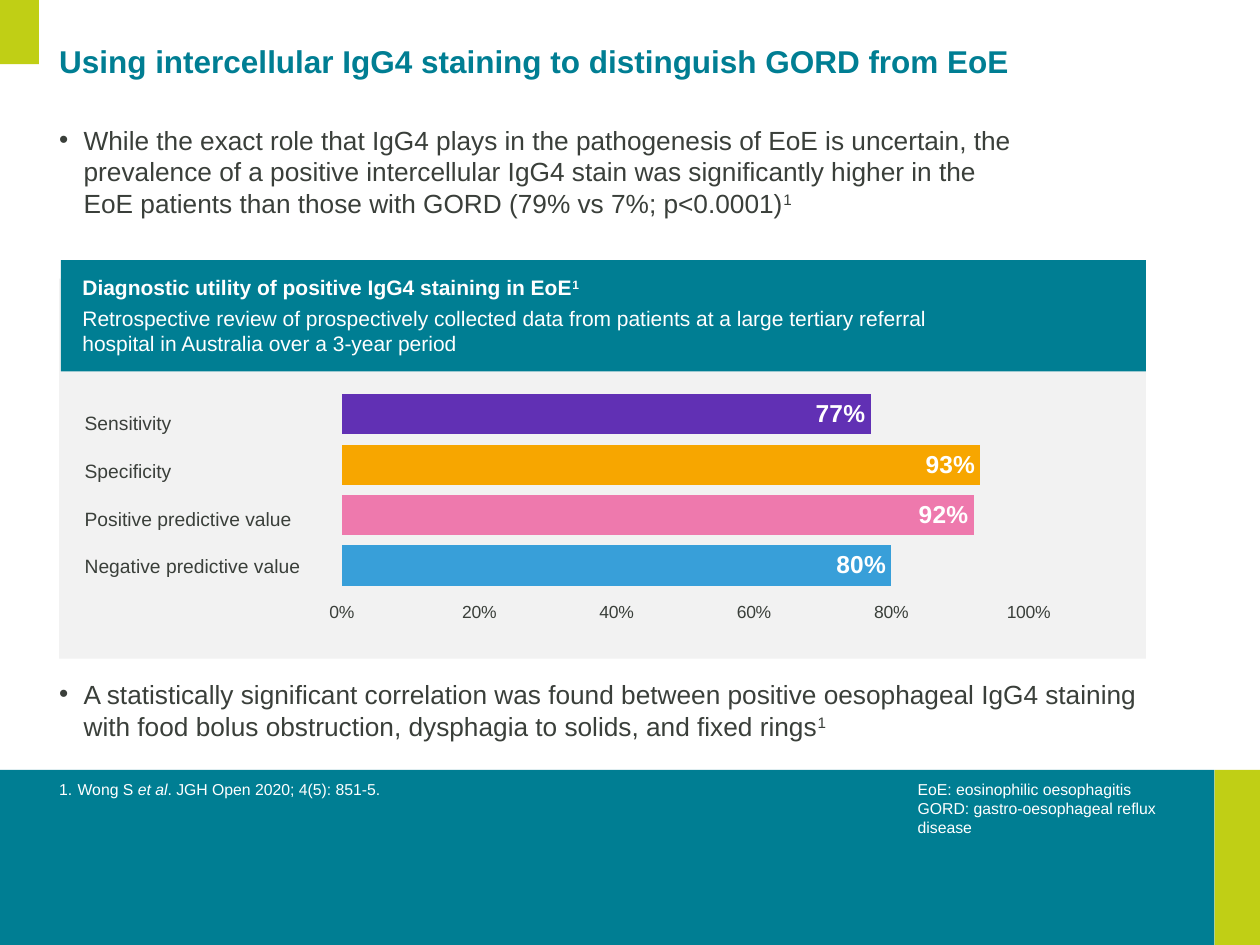
from lxml import etree
from pptx import Presentation
from pptx.chart.data import CategoryChartData
from pptx.dml.color import RGBColor
from pptx.enum.chart import XL_CHART_TYPE, XL_LABEL_POSITION, XL_TICK_LABEL_POSITION, XL_TICK_MARK
from pptx.enum.shapes import MSO_SHAPE
from pptx.enum.text import MSO_ANCHOR, PP_ALIGN
from pptx.oxml.ns import qn
from pptx.util import Pt

RECT = MSO_SHAPE.RECTANGLE
TOP, MIDDLE = MSO_ANCHOR.TOP, MSO_ANCHOR.MIDDLE
LEFT = PP_ALIGN.LEFT
BAR = XL_CHART_TYPE.BAR_CLUSTERED
INSIDE_END = XL_LABEL_POSITION.INSIDE_END
NO_LABELS = XL_TICK_LABEL_POSITION.NONE
NO_TICK, TICK_OUT = XL_TICK_MARK.NONE, XL_TICK_MARK.OUTSIDE

FONT = "Arial"
TEAL = RGBColor(0x00, 0x7E, 0x93)
LIME = RGBColor(0xC0, 0xCF, 0x15)
WHITE = RGBColor(0xFF, 0xFF, 0xFF)
INK = RGBColor(0x3A, 0x3F, 0x3A)
GREY = RGBColor(0xF2, 0xF2, 0xF2)
PURPLE = RGBColor(0x61, 0x30, 0xB4)
ORANGE = RGBColor(0xF7, 0xA6, 0x00)
PINK = RGBColor(0xEE, 0x79, 0xAD)
BLUE = RGBColor(0x38, 0x9F, 0xD9)

MEASURES = [
    ("Sensitivity", 0.77, PURPLE),
    ("Specificity", 0.93, ORANGE),
    ("Positive predictive value", 0.92, PINK),
    ("Negative predictive value", 0.80, BLUE),
]


def add_rect(s, box, color):
    """Add a plain filled rectangle."""
    sp = s.shapes.add_shape(RECT, *map(Pt, box))
    sp.shadow.inherit = False
    sp.fill.solid()
    sp.fill.fore_color.rgb = color
    sp.line.fill.background()


def set_frame(tf, insets=(0, 0, 0, 0), anchor=TOP):
    """Set wrapping, insets and anchor of a text frame."""
    tf.word_wrap = True
    tf.vertical_anchor = anchor
    tf.margin_left, tf.margin_top, tf.margin_right, tf.margin_bottom = map(Pt, insets)


def add_text(s, box, insets=(0, 0, 0, 0)):
    """Add a wrapping text box and return its text frame."""
    tf = s.shapes.add_textbox(*map(Pt, box)).text_frame
    set_frame(tf, insets)
    return tf


def add_run(p, text, size, color, bold=False, italic=False, sup=False):
    """Append one formatted run to a paragraph."""
    r = p.add_run()
    r.text = text
    f = r.font
    f.name, f.size, f.bold, f.italic = FONT, Pt(size), bold, italic
    f.color.rgb = color
    if sup:
        r._r.get_or_add_rPr().set("baseline", "30000")


def set_bullet(p, indent, tag, **attrs):
    """Give a paragraph a hanging bullet or number."""
    pPr = p._p.get_or_add_pPr()
    pPr.set("marL", str(Pt(indent)))
    pPr.set("indent", str(-Pt(indent)))
    etree.SubElement(pPr, qn("a:buFont"), typeface=FONT)
    etree.SubElement(pPr, qn(tag), **attrs)


def add_title(s, box, text):
    """Place and format the title placeholder."""
    sp = s.shapes.title
    sp.left, sp.top, sp.width, sp.height = map(Pt, box)
    sp.fill.solid()
    sp.fill.fore_color.rgb = WHITE
    tf = sp.text_frame
    set_frame(tf, (0, 0, 0, 5.4), MIDDLE)
    p = tf.paragraphs[0]
    p.alignment = LEFT
    add_run(p, text, 18, TEAL, bold=True)


def add_statement(s, box, text):
    """Add a bulleted statement that cites reference 1."""
    p = add_text(s, box).paragraphs[0]
    set_bullet(p, 14, "a:buChar", char="•")
    add_run(p, text, 15, INK)
    add_run(p, "1", 15, INK, sup=True)


def add_header(s, box):
    """Add the teal panel heading."""
    x, y, w, h = box
    add_rect(s, box, TEAL)
    tf = add_text(s, (x + 12.3, y + 8.3, 490, h - 10))
    p = tf.paragraphs[0]
    add_run(p, "Diagnostic utility of positive IgG4 staining in EoE", 12, WHITE, bold=True)
    add_run(p, "1", 12, WHITE, bold=True, sup=True)
    p = tf.add_paragraph()
    p.space_before = Pt(3)
    add_run(p, "Retrospective review of prospectively collected data from patients at a large "
            "tertiary referral hospital in Australia over a 3-year period", 12, WHITE)


def set_plot_area(chart, frame, plot):
    """Fix the inner plot area, both boxes given on the slide."""
    area = chart._chartSpace.find(".//" + qn("c:plotArea"))
    layout = area.find(qn("c:layout"))
    if layout is None:
        layout = etree.Element(qn("c:layout"))
        area.insert(0, layout)
    manual = etree.SubElement(layout, qn("c:manualLayout"))
    fx, fy, fw, fh = frame
    px, py, pw, ph = plot
    values = [("layoutTarget", "inner"), ("xMode", "edge"), ("yMode", "edge"),
              ("x", (px - fx) / fw), ("y", (py - fy) / fh), ("w", pw / fw), ("h", ph / fh)]
    for tag, value in values:
        etree.SubElement(manual, qn("c:" + tag), val=str(value))


def add_bars(s, frame, plot):
    """Add the bar chart with one colour per measure."""
    rows = MEASURES[::-1]
    data = CategoryChartData(number_format="0%")
    data.categories = [name for name, _, _ in rows]
    data.add_series("Diagnostic utility", [value for _, value, _ in rows])
    chart = s.shapes.add_chart(BAR, *map(Pt, frame), data).chart
    chart.has_legend = chart.has_title = False
    chart.font.name, chart.font.size = FONT, Pt(10)
    chart.font.color.rgb = INK
    set_plot_area(chart, frame, plot)

    bars = chart.plots[0]
    bars.gap_width = 25
    bars.vary_by_categories = False
    for i, (_, _, color) in enumerate(rows):
        fill = bars.series[0].points[i].format.fill
        fill.solid()
        fill.fore_color.rgb = color
    bars.has_data_labels = True
    labels = bars.data_labels
    labels.show_value = True
    labels.number_format, labels.number_format_is_linked = "0%", False
    labels.position = INSIDE_END
    f = labels.font
    f.name, f.size, f.bold = FONT, Pt(14), True
    f.color.rgb = WHITE

    axis = chart.category_axis
    axis.tick_label_position = NO_LABELS
    axis.major_tick_mark = NO_TICK
    axis.format.line.fill.background()
    axis = chart.value_axis
    axis.minimum_scale, axis.maximum_scale, axis.major_unit = 0, 1, 0.2
    axis.has_major_gridlines = False
    axis.major_tick_mark = TICK_OUT
    axis.tick_labels.number_format = "0%"
    axis.tick_labels.number_format_is_linked = False
    axis.format.line.fill.background()


def add_panel(s, box):
    """Add the grey panel with heading, measure names and bars."""
    x, y, w, h = box
    add_rect(s, box, GREY)
    add_header(s, (x + 1, y - 10.5, w - 1, 63.5))
    add_bars(s, (x + 146, y + 57, 440, 156), (x + 161.5, y + 63.2, 392.5, 115.2))
    for i, (name, _, _) in enumerate(MEASURES):
        p = add_text(s, (x + 14.6, y + 75.6 + 27.4 * i, 144, 13.7)).paragraphs[0]
        add_run(p, name, 11, INK)


def add_footer(s, box):
    """Add the footer band with the reference and abbreviations."""
    x, y, w, h = box
    add_rect(s, (x, y, w - 26, h), TEAL)
    add_rect(s, (x + w - 26, y, 26, h), LIME)
    insets = (0, 5.8, 8.6, 0)
    p = add_text(s, (x + 33.8, y, 469, h), insets).paragraphs[0]
    set_bullet(p, 10.6, "a:buAutoNum", type="arabicPeriod")
    add_run(p, "Wong S ", 9, WHITE)
    add_run(p, "et al", 9, WHITE, italic=True)
    add_run(p, ". JGH Open 2020; 4(5): 851-5.", 9, WHITE)
    tf = add_text(s, (x + 524.4, y, 169, h), insets)
    add_run(tf.paragraphs[0], "EoE: eosinophilic oesophagitis", 9, WHITE)
    add_run(tf.add_paragraph(), "GORD: gastro-oesophageal reflux disease", 9, WHITE)


def main():
    """Build the slide and save it."""
    prs = Presentation()
    prs.slide_width, prs.slide_height = Pt(720), Pt(540)
    s = prs.slides.add_slide(prs.slide_layouts[5])
    add_rect(s, (-0.7, 0, 23, 36.7), LIME)
    add_title(s, (33.8, 13, 597, 49), "Using intercellular IgG4 staining to distinguish GORD from EoE")
    add_statement(s, (33.8, 70.9, 553, 77.8),
                  "While the exact role that IgG4 plays in the pathogenesis of EoE is uncertain, "
                  "the prevalence of a positive intercellular IgG4 stain was significantly higher "
                  "in the EoE patients than those with GORD (79% vs 7%; p<0.0001)")
    add_panel(s, (33.8, 159.2, 621, 217.2))
    add_statement(s, (33.8, 387.6, 621.4, 48.2),
                  "A statistically significant correlation was found between positive oesophageal "
                  "IgG4 staining with food bolus obstruction, dysphagia to solids, and fixed rings")
    add_footer(s, (0, 440, 720, 100))
    prs.save("out.pptx")


if __name__ == "__main__":
    main()
